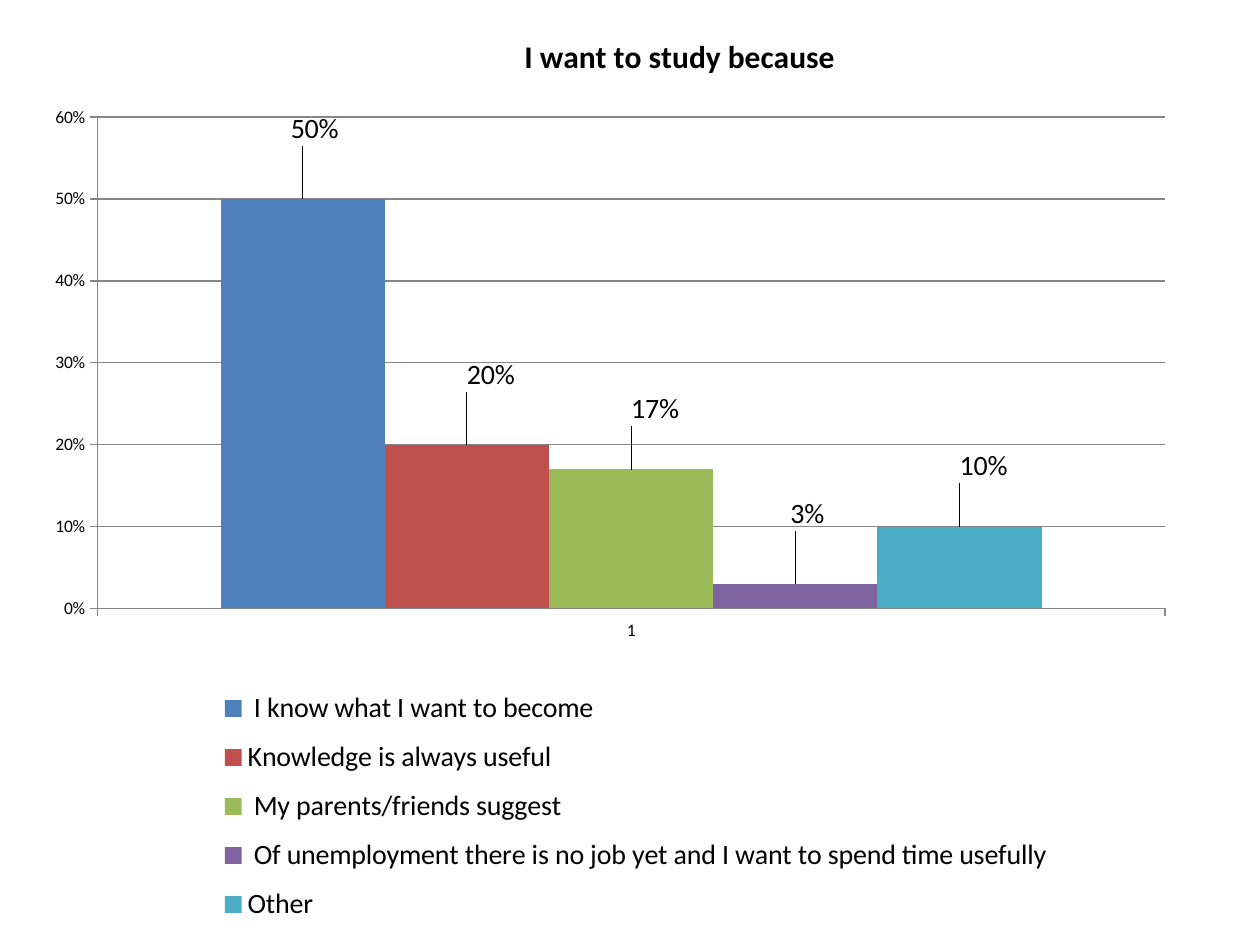
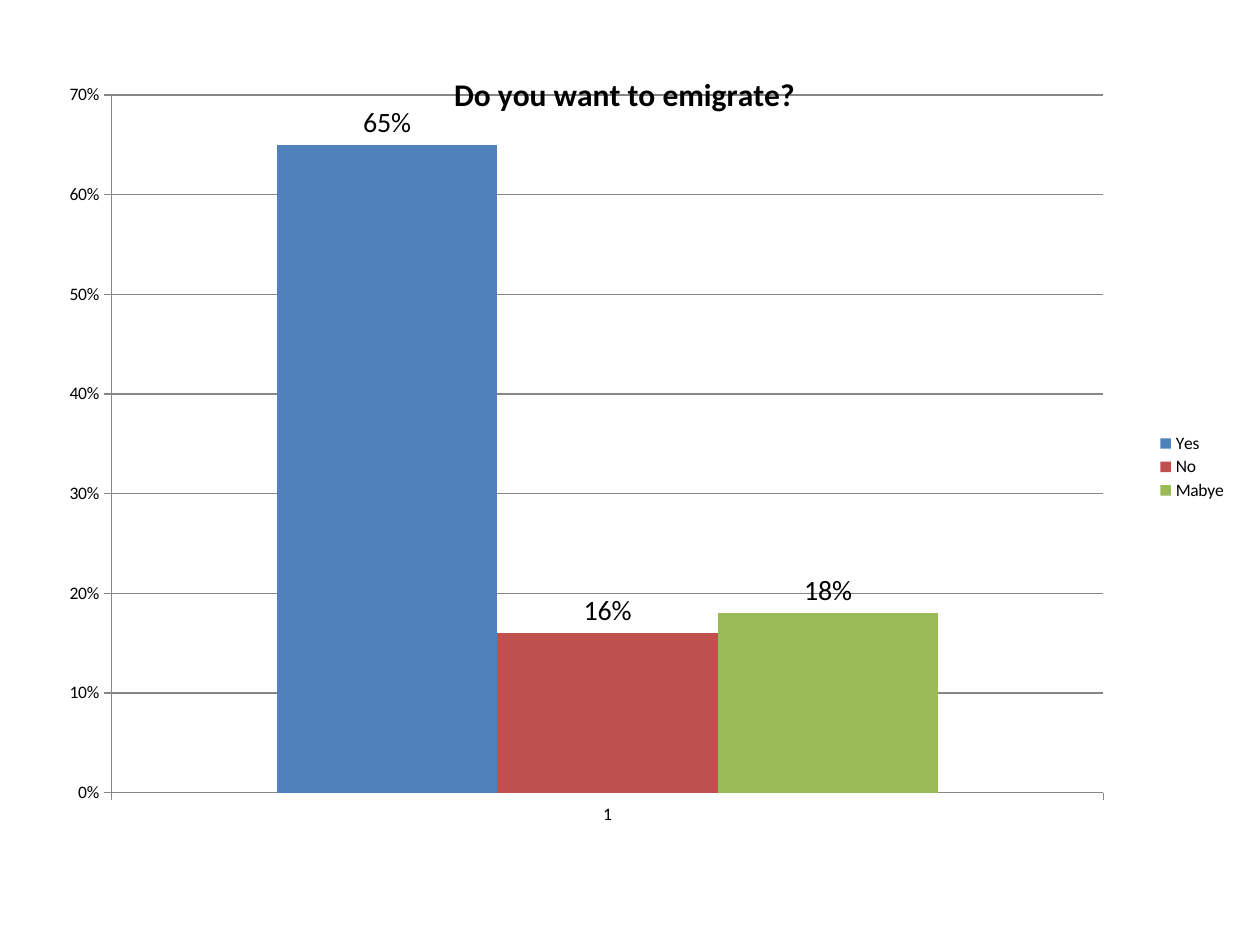
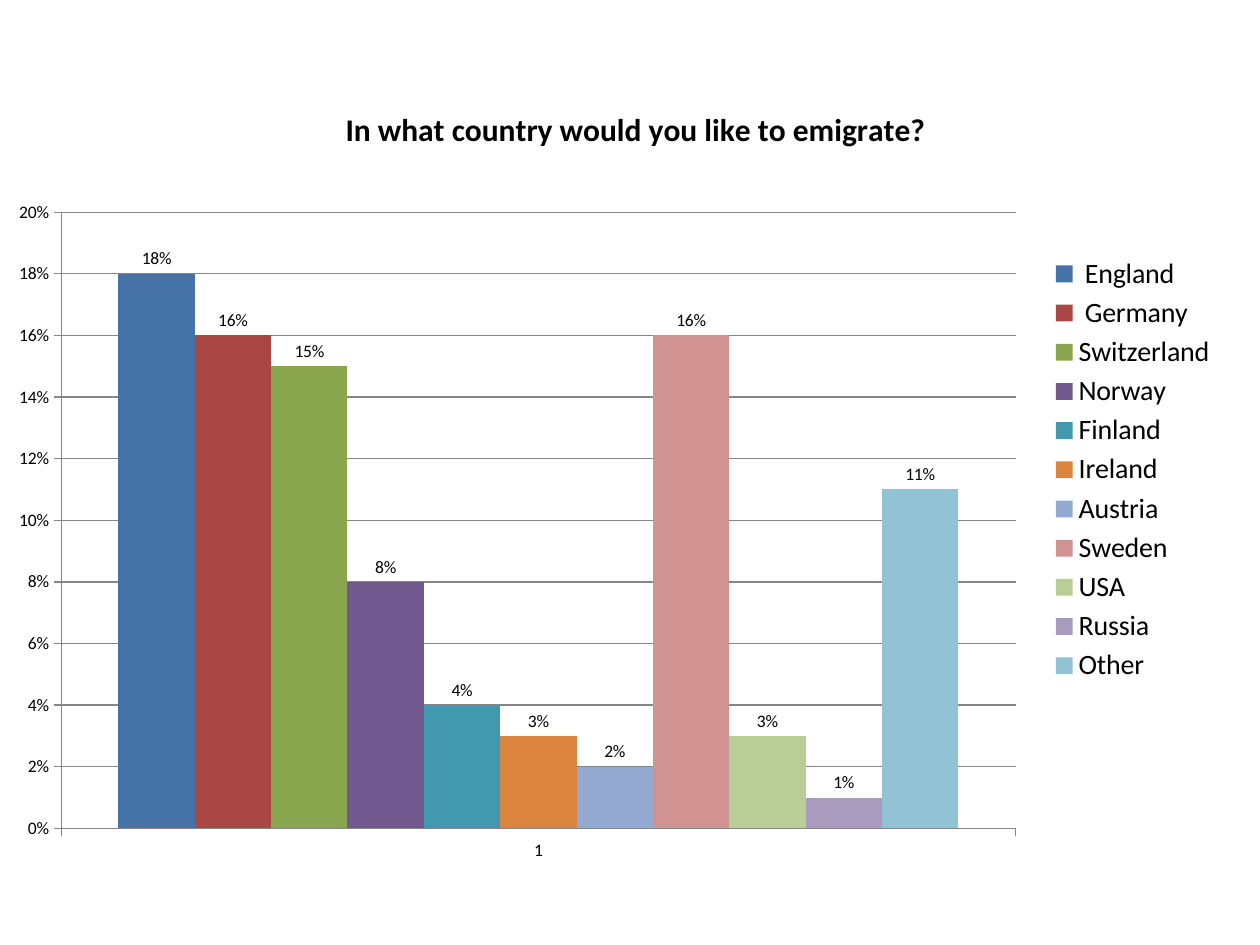
from lxml import etree
from pptx import Presentation
from pptx.chart.data import CategoryChartData as ChartData
from pptx.dml.color import RGBColor
from pptx.enum.chart import (XL_CHART_TYPE as ChartType, XL_LABEL_POSITION as LabelSpot,
                             XL_LEGEND_POSITION as LegendSpot, XL_TICK_MARK as Tick)
from pptx.oxml.ns import qn
from pptx.util import Inches, Pt

FONT = "Calibri"
COLORS = {"text": "000000", "line": "868686"}
BRIGHT = ["4F81BD", "C0504D", "9BBB59", "8064A2", "4BACC6"]
MUTED = ["4572A7", "AA4643", "89A54E", "71588F", "4198AF", "DB843D",
         "93A9CF", "D19392", "B9CD96", "A99BBD", "91C3D5"]

REASONS = {
    " I know what I want to become": 0.5,
    "Knowledge is always useful": 0.2,
    " My parents/friends suggest": 0.17,
    " Of unemployment there is no job yet and I want to spend time usefully": 0.03,
    "Other": 0.1,
}
REASON_LABEL_SHIFTS = [(0.01, -0.05), (0.02, -0.05), (0.02, -0.04), (0.01, -0.05), (0.02, -0.04)]
EMIGRATE = {"Yes": 0.65, "No": 0.16, "Mabye": 0.18}
COUNTRIES = {
    " England": 0.18, " Germany": 0.16, "Switzerland": 0.15, "Norway": 0.08,
    "Finland": 0.04, "Ireland": 0.03, "Austria": 0.02, "Sweden": 0.16,
    "USA": 0.03, "Russia": 0.01, "Other": 0.11,
}


def rgb(value):
    return RGBColor.from_string(value)


def format_font(font, size, bold=False):
    font.name = FONT
    font.size = Pt(size)
    font.bold = bold
    font.color.rgb = rgb(COLORS["text"])


def place(parent, index, x, y, w=None, h=None, inner=False, edge=True):
    """Give a chart part a manual layout, in fractions of the chart."""
    for old in parent.findall(qn("c:layout")):
        parent.remove(old)
    layout = etree.Element(qn("c:layout"))
    manual = etree.SubElement(layout, qn("c:manualLayout"))
    settings = [("layoutTarget", "inner" if inner else None),
                ("xMode", "edge" if edge else None), ("yMode", "edge" if edge else None),
                ("x", x), ("y", y), ("w", w), ("h", h)]
    for name, value in settings:
        if value is not None:
            etree.SubElement(manual, qn(f"c:{name}")).set("val", str(value))
    parent.insert(index, layout)


def add_title(chart, text, spot):
    chart.has_title = True
    frame = chart.chart_title.text_frame
    frame.text = text
    format_font(frame.paragraphs[0].runs[0].font, 18, bold=True)
    place(chart.chart_title.element, 1, *spot)


def add_legend(chart, size, area):
    chart.has_legend = True
    chart.legend.position = LegendSpot.RIGHT
    chart.legend.include_in_layout = False
    format_font(chart.legend.font, size)
    place(chart.element.find(".//" + qn("c:legend")), 1, *area)


def format_axes(chart, top, step):
    values = chart.value_axis
    values.minimum_scale, values.maximum_scale, values.major_unit = 0, top, step
    values.tick_labels.number_format = "0%"
    values.tick_labels.number_format_is_linked = False
    values.has_major_gridlines = True
    values.major_gridlines.format.line.color.rgb = rgb(COLORS["line"])
    for axis in (values, chart.category_axis):
        axis.major_tick_mark = Tick.OUTSIDE
        axis.format.line.color.rgb = rgb(COLORS["line"])


def format_series(chart, colors, label_size):
    for series, color in zip(chart.plots[0].series, colors):
        series.format.fill.solid()
        series.format.fill.fore_color.rgb = rgb(color)
        labels = series.data_labels
        labels.show_value = True
        labels.number_format = "0%"
        labels.number_format_is_linked = False
        labels.position = LabelSpot.OUTSIDE_END
        format_font(labels.font, label_size)


def shift_labels(chart, shifts, size):
    for series, shift in zip(chart.plots[0].series, shifts):
        label = series.points[0].data_label
        format_font(label.font, size)
        label.position = LabelSpot.OUTSIDE_END
    for element, shift in zip(chart.element.iter(qn("c:dLbl")), shifts):
        place(element, 1, *shift, edge=False)


def add_column_chart(deck, box, title, answers, colors, *, top, step, plot, title_spot,
                     legend, legend_size=16, label_size=16):
    page = deck.slides.add_slide(deck.slide_layouts[6])
    data = ChartData(number_format="0%")
    data.categories = ["1"]
    for name, share in answers.items():
        data.add_series(name, [share])
    chart = page.shapes.add_chart(ChartType.COLUMN_CLUSTERED, *map(Inches, box), data).chart
    format_font(chart.font, 10)
    chart.plots[0].gap_width = 150
    chart.plots[0].vary_by_categories = False
    add_title(chart, title, title_spot)
    add_legend(chart, legend_size, legend)
    format_axes(chart, top, step)
    format_series(chart, colors, label_size)
    place(chart.element.find(".//" + qn("c:plotArea")), 0, *plot, inner=True)
    return chart


def main():
    deck = Presentation()
    deck.slide_width, deck.slide_height = Inches(10), Inches(7.5)

    # Reasons to study
    chart = add_column_chart(
        deck, (0.25, 0, 9.5, 7.5), "I want to study because", REASONS, BRIGHT,
        top=0.6, step=0.1, plot=(0.055, 0.124, 0.892, 0.52),
        title_spot=(0.407, 0.03), legend=(0.145, 0.716, 0.72, 0.275))
    shift_labels(chart, REASON_LABEL_SHIFTS, 16)

    # Wish to emigrate
    add_column_chart(
        deck, (0, 0.25, 9.83, 6.92), "Do you want to emigrate?", EMIGRATE, BRIGHT,
        top=0.7, step=0.1, plot=(0.09, 0.073, 0.801, 0.8),
        title_spot=(0.362, 0.04), legend=(0.93, 0.457, 0.065, 0.085), legend_size=10)

    # Preferred countries
    add_column_chart(
        deck, (-0.05, 0.55, 10.1, 6.41), "In what country would you like to emigrate?",
        COUNTRIES, MUTED, top=0.2, step=0.02, plot=(0.053, 0.177, 0.75, 0.763),
        title_spot=(0.272, 0.04), legend=(0.825, 0.226, 0.14, 0.54), label_size=10)

    deck.save("out.pptx")


if __name__ == "__main__":
    main()
